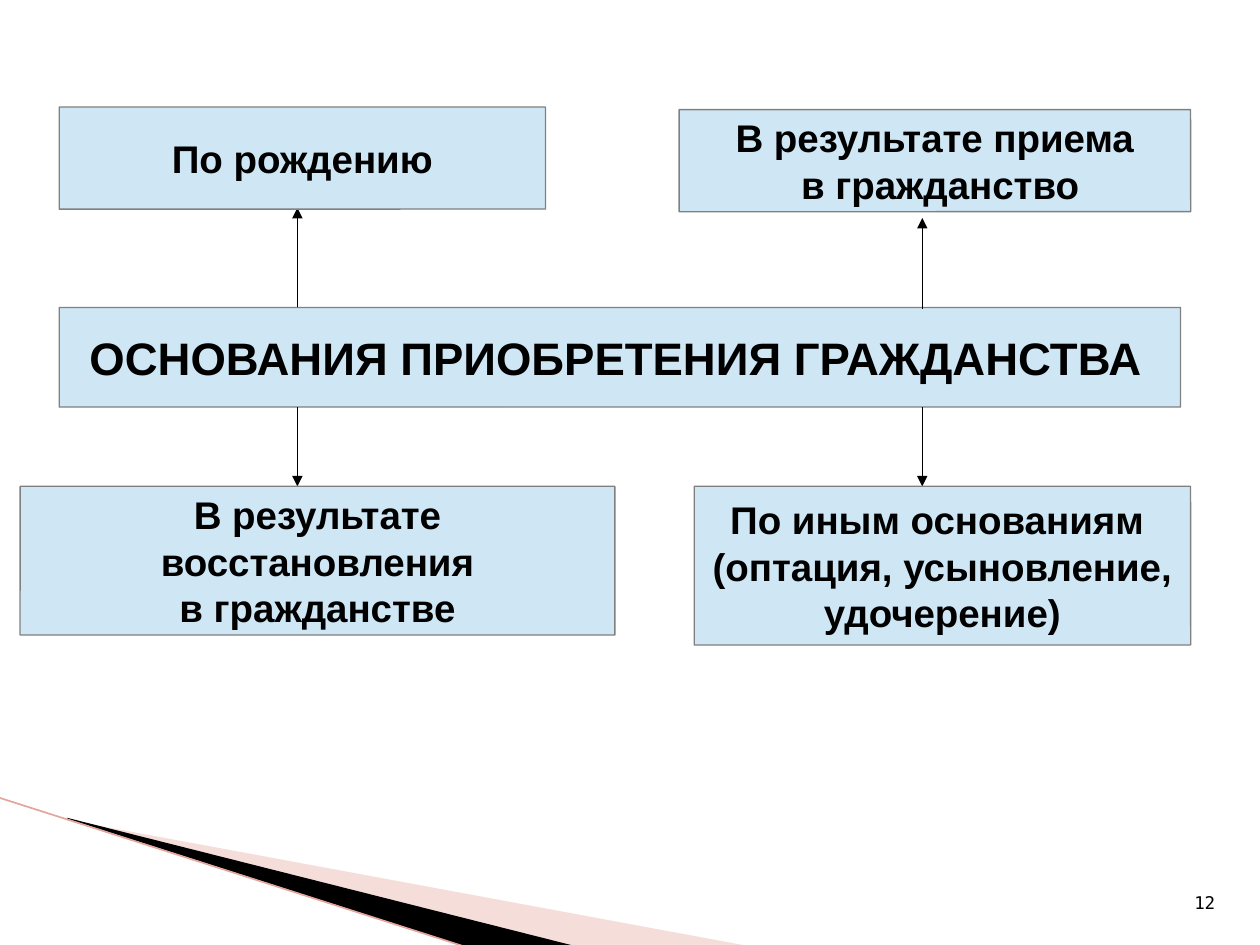
from dataclasses import dataclass

import pptx
import pptx.dml.color
import pptx.enum.shapes
import pptx.enum.text
import pptx.oxml
import pptx.oxml.ns
import pptx.util
from pptx.util import Inches

COLORS = {
    "box": "CFE7F5",
    "edge": "808080",
    "ink": "000000",
    "blush": "E7ACA4",
    "rose": "E3A59C",
}
ALIGN = pptx.enum.text.PP_ALIGN


@dataclass
class Box:
    left: float
    top: float
    width: float
    height: float
    lines: list[str]
    size: int = 22
    align: ALIGN = ALIGN.CENTER
    pad: float = 0.12


@dataclass
class Line:
    start: tuple[float, float]
    end: tuple[float, float]
    color: str = "ink"
    weight: float = 0.75
    arrow: bool = True


@dataclass
class Wedge:
    points: list[tuple[float, float]]
    color: str
    alpha: int = 100


WEDGES = [
    Wedge([(0.55, 6.51), (5.95, 7.51), (4.56, 7.51), (0.55, 6.5)], "blush", 40),
    Wedge([(0.53, 6.49), (4.57, 7.51), (3.72, 7.52), (0.54, 6.5)], "ink"),
]
STRIPE = Line((-0.01, 6.33), (3.71, 7.52), "rose", 0.95, False)
LEFT, RIGHT = 2.36, 7.32
ARROWS = [
    Line((RIGHT, 2.45), (RIGHT, 1.73)),
    Line((LEFT, 2.44), (LEFT, 1.65)),
    Line((LEFT, 3.23), (LEFT, 3.86)),
    Line((RIGHT, 3.23), (RIGHT, 3.86)),
]
TITLE = Box(0.47, 2.44, 8.9, 0.79, ["ОСНОВАНИЯ ПРИОБРЕТЕНИЯ ГРАЖДАНСТВА"],
            26, ALIGN.LEFT, 0.24)
GROUNDS = [
    Box(0.47, 0.85, 3.86, 0.81, ["По рождению"]),
    Box(5.39, 0.87, 4.06, 0.81, ["В результате приема", " в гражданство"]),
    Box(0.16, 3.86, 4.72, 1.18, ["В результате восстановления", "в гражданстве"]),
    Box(5.51, 3.86, 3.94, 1.26,
        ["По иным основаниям ", "(оптация, усыновление,", "удочерение)"]),
]


def rgb(name: str) -> pptx.dml.color.RGBColor:
    return pptx.dml.color.RGBColor.from_string(COLORS[name])


def add(tag: str, parent, **attrs: str) -> None:
    node = pptx.oxml.parse_xml(f"<{tag} {pptx.oxml.ns.nsdecls('a')}/>")
    for key, value in attrs.items():
        node.set(key, value)
    parent.append(node)


def style(run, face: str, size: int, bold: bool) -> None:
    run.font.name = face
    run.font.size = pptx.util.Pt(size)
    run.font.bold = bold
    run.font.color.rgb = rgb("ink")


def draw_wedge(slide, wedge: Wedge) -> None:
    first, *rest = [(Inches(x), Inches(y)) for x, y in wedge.points]
    maker = slide.shapes.build_freeform(*first)
    maker.add_line_segments(rest, close=True)
    shape = maker.convert_to_shape()
    shape.shadow.inherit = False
    shape.fill.solid()
    shape.fill.fore_color.rgb = rgb(wedge.color)
    shape.line.fill.background()
    if wedge.alpha < 100:
        tint = shape.element.spPr.find(".//" + pptx.oxml.ns.qn("a:srgbClr"))
        add("a:alpha", tint, val=str(wedge.alpha * 1000))


def draw_line(slide, line: Line) -> None:
    shape = slide.shapes.add_connector(
        pptx.enum.shapes.MSO_CONNECTOR.STRAIGHT,
        *[Inches(v) for v in line.start + line.end])
    shape.line.color.rgb = rgb(line.color)
    shape.line.width = pptx.util.Pt(line.weight)
    props = shape.element.spPr
    if line.arrow:
        add("a:tailEnd", props.find(pptx.oxml.ns.qn("a:ln")), type="triangle")
    add("a:effectLst", props)


def draw_box(slide, box: Box) -> None:
    shape = slide.shapes.add_shape(
        pptx.enum.shapes.MSO_SHAPE.ROUNDED_RECTANGLE,
        Inches(box.left), Inches(box.top), Inches(box.width), Inches(box.height))
    shape.adjustments[0] = 0.002
    shape.shadow.inherit = False
    shape.fill.solid()
    shape.fill.fore_color.rgb = rgb("box")
    shape.line.color.rgb = rgb("edge")
    shape.line.width = pptx.util.Pt(0.75)
    frame = shape.text_frame
    frame.word_wrap = True
    frame.vertical_anchor = pptx.enum.text.MSO_ANCHOR.MIDDLE
    frame.margin_left = Inches(box.pad)
    frame.margin_right = Inches(0.12)
    frame.text = "\n".join(box.lines)
    for para in frame.paragraphs:
        para.alignment = box.align
        style(para.runs[0], "Arial", box.size, True)


def draw_page(slide, number: str) -> None:
    shape = slide.shapes.add_textbox(
        Inches(9.38), Inches(7.03), Inches(0.38), Inches(0.27))
    frame = shape.text_frame
    frame.word_wrap = False
    frame.auto_size = pptx.enum.text.MSO_AUTO_SIZE.SHAPE_TO_FIT_TEXT
    frame.text = number
    style(frame.paragraphs[0].runs[0], "DejaVu Sans Mono", 10, False)


def main() -> None:
    deck = pptx.Presentation()
    deck.slide_width, deck.slide_height = Inches(10), Inches(7.5)
    slide = deck.slides.add_slide(deck.slide_layouts[6])
    for wedge in WEDGES:
        draw_wedge(slide, wedge)
    draw_line(slide, STRIPE)
    draw_box(slide, TITLE)
    for arrow in ARROWS:
        draw_line(slide, arrow)
    for ground in GROUNDS:
        draw_box(slide, ground)
    draw_page(slide, "12")
    deck.save("out.pptx")


if __name__ == "__main__":
    main()
